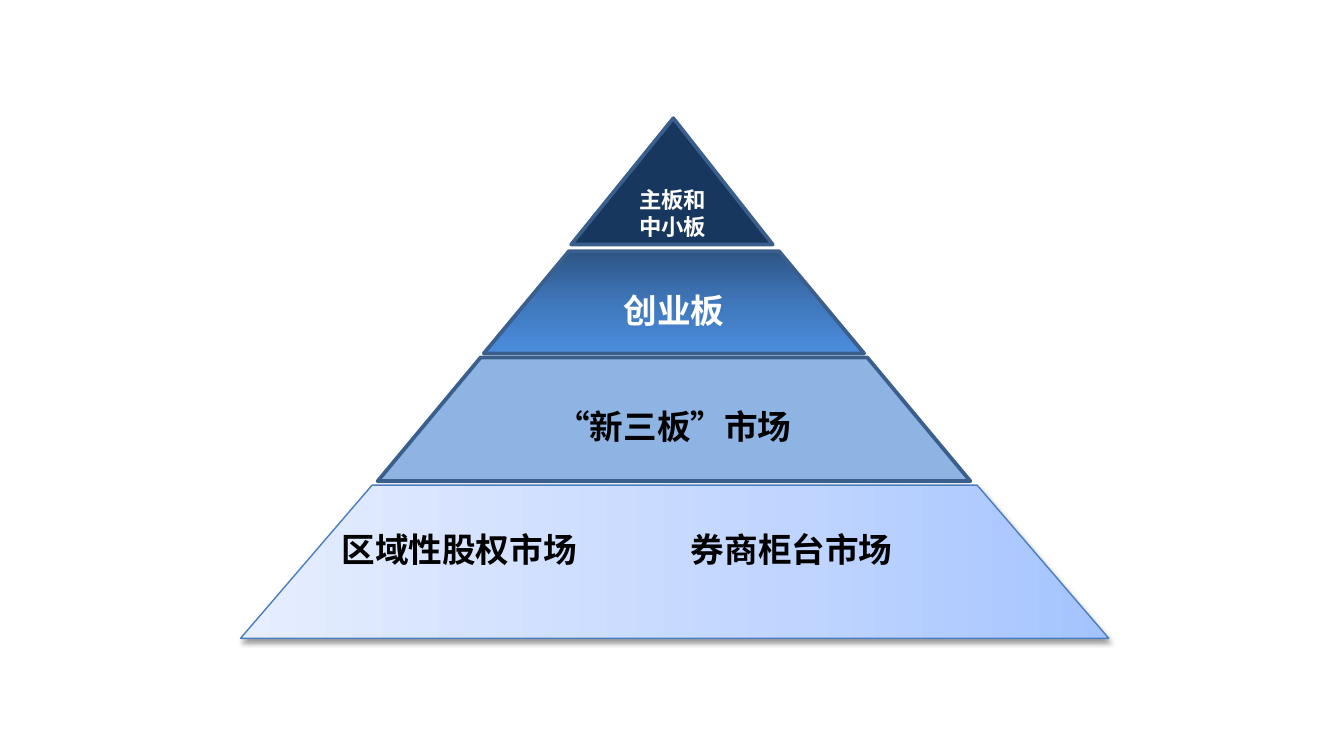
"""Build a slide with a four-tier pyramid of capital markets."""
from lxml import etree
from pptx import Presentation
from pptx.dml.color import RGBColor
from pptx.enum import shapes, text
from pptx.oxml import ns
from pptx.util import Inches, Pt

THEME = {
    "font": "Calibri", "small": 12, "large": 18,
    "light": "FFFFFF", "dark": "000000",
    "edge": "3A5F8C", "base_edge": "4B7EBC",
    "navy": "17375E", "sky": "8EB4E3",
    "blue_fade": [(0, "2D5484"), (50, "3F77BB"), (100, "4B8DDE")],
    "pale_fade": [(0, "A4C4FF"), (35, "BFD4FF"), (100, "E6EEFF")],
}


def add_color(parent, tag, color, **attrs):
    """Append an element holding one RGB colour and return that colour."""
    el = etree.SubElement(parent, ns.qn(tag), **attrs)
    return etree.SubElement(el, ns.qn("a:srgbClr"), val=color)


def paint(sp, fill, angle):
    """Fill a shape with one colour or with gradient stops."""
    if isinstance(fill, str):
        sp.fill.solid()
        sp.fill.fore_color.rgb = RGBColor.from_string(fill)
        return
    sp.fill.gradient()
    sp.fill.gradient_angle = angle
    stops = sp._element.spPr.find(ns.qn("a:gradFill")).find(ns.qn("a:gsLst"))
    for old in list(stops):
        stops.remove(old)
    for pos, color in fill:
        add_color(stops, "a:gs", color, pos=str(pos * 1000))


prs = Presentation()
prs.slide_width = Inches(10)
prs.slide_height = prs.slide_width * 9 // 16
s = prs.slides.add_slide(prs.slide_layouts[6])

TRI = shapes.MSO_SHAPE.ISOSCELES_TRIANGLE
TRAP = shapes.MSO_SHAPE.TRAPEZOID
tiers = [
    (TRI, 0.507, (4.25, 0.88, 1.5, 0.94), "navy", 0, "edge", 2, "主板和中小板", "small", "light"),
    (TRAP, 0.833, (3.6, 1.87, 2.83, 0.76), "blue_fade", 270, "edge", 2, "创业板", "large", "light"),
    (TRAP, 0.833, (2.81, 2.66, 4.41, 0.92), "sky", 0, "edge", 2, "“新三板”市场", "large", "dark"),
    (TRAP, 0.859, (1.79, 3.61, 6.46, 1.14), "pale_fade", 180, "base_edge", 0.75,
     "区域性股权市场\t券商柜台市场", "large", "dark"),
]
for kind, adj, box, fill, angle, edge, width, label, size, color in tiers:
    sp = s.shapes.add_shape(kind, *map(Inches, box))
    sp.adjustments[0] = adj
    sp.shadow.inherit = False
    paint(sp, THEME[fill], angle)
    sp.line.color.rgb = RGBColor.from_string(THEME[edge])
    sp.line.width = Pt(width)

    tf = sp.text_frame
    tf.word_wrap = True
    tf.vertical_anchor = text.MSO_ANCHOR.MIDDLE
    p = tf.paragraphs[0]
    p.text = label
    p.alignment = text.PP_ALIGN.CENTER
    for r in p.runs:
        r.font.name = THEME["font"]
        r.font.size = Pt(THEME[size])
        r.font.bold = True
        r.font.color.rgb = RGBColor.from_string(THEME[color])

p.alignment = text.PP_ALIGN.LEFT
tf.margin_bottom = Inches(0.35)
tabs = etree.SubElement(p._p.get_or_add_pPr(), ns.qn("a:tabLst"))
etree.SubElement(tabs, ns.qn("a:tab"), pos=str(Inches(2.6)), algn="l")

effects = sp._element.spPr.find(ns.qn("a:effectLst"))
shade = add_color(effects, "a:outerShdw", THEME["dark"], blurRad=str(Pt(3.1)),
                  dist=str(Pt(1.6)), dir="5400000", rotWithShape="0")
etree.SubElement(shade, ns.qn("a:alpha"), val="38000")

prs.save("out.pptx")
